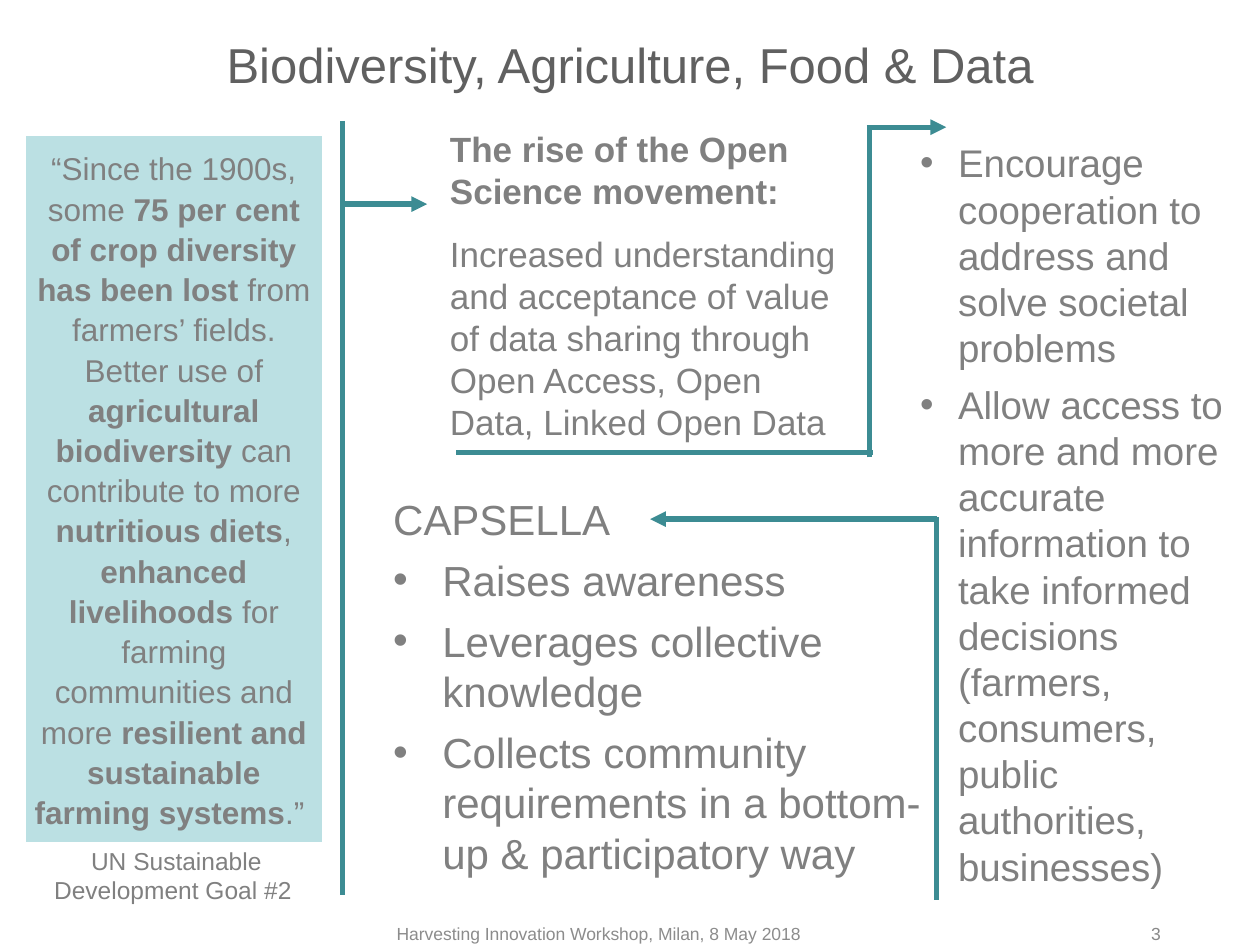
from lxml.etree import SubElement
from pptx import Presentation
from pptx.dml.color import RGBColor
from pptx.enum.shapes import MSO_CONNECTOR, MSO_SHAPE
from pptx.enum.text import MSO_ANCHOR, PP_ALIGN
from pptx.oxml.ns import qn
from pptx.util import Inches, Pt

COLORS = {"title": "606060", "text": "808080", "footer": "8C8C8C", "number": "898989",
          "panel": "BBE0E3", "panel_line": "FFFFFF", "arrow": "3C8C93"}
FONT = "Arial"

# Content: a paragraph is a list of (text, bold) runs
TITLE = "Biodiversity, Agriculture, Food & Data"
FOOTER = "Harvesting Innovation Workshop, Milan, 8 May 2018"
SOURCE = "UN Sustainable Development Goal #2 "
QUOTE = [
    ("“Since the 1900s, some ", False),
    ("75 per cent of crop diversity has been lost ", True),
    ("from farmers’ fields. Better use of ", False),
    ("agricultural biodiversity ", True),
    ("can contribute to more ", False),
    ("nutritious diets", True),
    (", ", False),
    ("enhanced livelihoods ", True),
    ("for farming communities and more ", False),
    ("resilient and sustainable farming systems", True),
    (".” ", False),
]
OPEN_SCIENCE = [
    [("The rise of the Open Science movement:", True)],
    [("Increased understanding and acceptance of value of data sharing through "
      "Open Access, Open Data, Linked Open Data", False)],
]
BENEFITS = [
    "Encourage cooperation to address and solve societal problems",
    "Allow access to more and more accurate information to take informed decisions "
    "(farmers, consumers, public authorities, businesses)",
]
PROJECT = "CAPSELLA"
PROJECT_ROLES = [
    "Raises awareness",
    "Leverages collective knowledge",
    "Collects community requirements in a bottom-up & participatory way",
]
# (from x, from y, to x, to y, arrowhead)
LINES = [
    (2.72, 0.96, 2.72, 7.1, False),
    (2.72, 1.62, 3.39, 1.62, True),
    (3.62, 3.59, 6.93, 3.59, False),
    (6.9, 3.63, 6.9, 0.99, False),
    (6.88, 1.01, 7.51, 1.01, True),
    (7.43, 7.14, 7.43, 4.1, False),
    (7.44, 4.12, 5.16, 4.12, True),
]

prs = Presentation()
prs.slide_width, prs.slide_height = Inches(10), Inches(7.5)
slide = prs.slides.add_slide(prs.slide_layouts[6])
shapes = slide.shapes


def rgb(name):
    return RGBColor.from_string(COLORS[name])


def plain(text):
    return [(text, False)]


def add_frame(box, preset=None):
    """Text box, or an unfilled preset shape holding text."""
    place = [Inches(v) for v in box]
    if preset is None:
        part = shapes.add_textbox(*place)
    else:
        part = shapes.add_shape(preset, *place)
        part.shadow.inherit = False
        part.fill.background()
        part.line.fill.background()
    part.text_frame.word_wrap = True
    part.text_frame.vertical_anchor = MSO_ANCHOR.MIDDLE
    return part


def write(part, paragraphs, size, color="text", align=PP_ALIGN.LEFT,
          before=0, after=0, indent=0, bullets_from=None):
    frame = part.text_frame
    for i, runs in enumerate(paragraphs):
        para = frame.paragraphs[0] if i == 0 else frame.add_paragraph()
        para.alignment = align
        para.space_before = Pt(before if i else 0)
        para.space_after = Pt(after)
        if bullets_from is not None and i >= bullets_from:
            props = para._p.get_or_add_pPr()
            props.set("marL", str(Inches(indent)))
            props.set("indent", str(-Inches(indent)))
            SubElement(props, qn("a:buFont"), typeface=FONT)
            SubElement(props, qn("a:buChar"), char="•")
        for text, bold in runs:
            run = para.add_run()
            run.text = text
            run.font.name, run.font.size, run.font.bold = FONT, Pt(size), bold
            run.font.color.rgb = rgb(color)


# Footer and slide number
write(add_frame((2.8, 7.21, 3.9, 0.4)), [plain(FOOTER)], 10, "footer", PP_ALIGN.CENTER)
write(add_frame((7.06, 7.21, 2.25, 0.4)), [plain("3")], 10, "number", PP_ALIGN.RIGHT)

# Title
write(add_frame((0.69, 0.21, 8.62, 0.59)), [plain(TITLE)], 28, "title", PP_ALIGN.CENTER)

# Quote panel and its source
panel = add_frame((0.2, 1.07, 2.36, 5.62), MSO_SHAPE.RECTANGLE)
panel.fill.solid()
panel.fill.fore_color.rgb = rgb("panel")
panel.line.color.rgb = rgb("panel_line")
panel.line.width = Pt(1)
quote = panel.text_frame
quote.margin_left = quote.margin_right = quote.margin_top = quote.margin_bottom = Inches(0.07)
write(panel, [QUOTE], 18, align=PP_ALIGN.CENTER)
quote.paragraphs[0].line_spacing = Pt(23)
write(add_frame((0.12, 6.66, 2.56, 0.57)), [plain(SOURCE)], 14, align=PP_ALIGN.CENTER)

# Open science, benefits and project texts
ROUNDED = MSO_SHAPE.ROUNDED_RECTANGLE
write(add_frame((7.06, 1.07, 2.98, 6.02), ROUNDED), [plain(t) for t in BENEFITS], 22,
      before=3, after=3, indent=0.3, bullets_from=0)
write(add_frame((3.35, 1, 3.54, 2.52), ROUNDED), OPEN_SCIENCE, 20, after=12)
write(add_frame((2.85, 3.67, 4.74, 3.54), ROUNDED),
      [plain(t) for t in [PROJECT] + PROJECT_ROLES], 24,
      after=6, indent=0.39, bullets_from=1)

# Flow lines and arrows
for x1, y1, x2, y2, has_head in LINES:
    line = shapes.add_connector(MSO_CONNECTOR.STRAIGHT,
                                *[Inches(v) for v in (x1, y1, x2, y2)])
    line.line.color.rgb = rgb("arrow")
    line.line.width = Pt(3)
    if has_head:
        SubElement(line.line._get_or_add_ln(), qn("a:tailEnd"), type="triangle")
    SubElement(line._element.spPr, qn("a:effectLst"))

prs.save("out.pptx")
